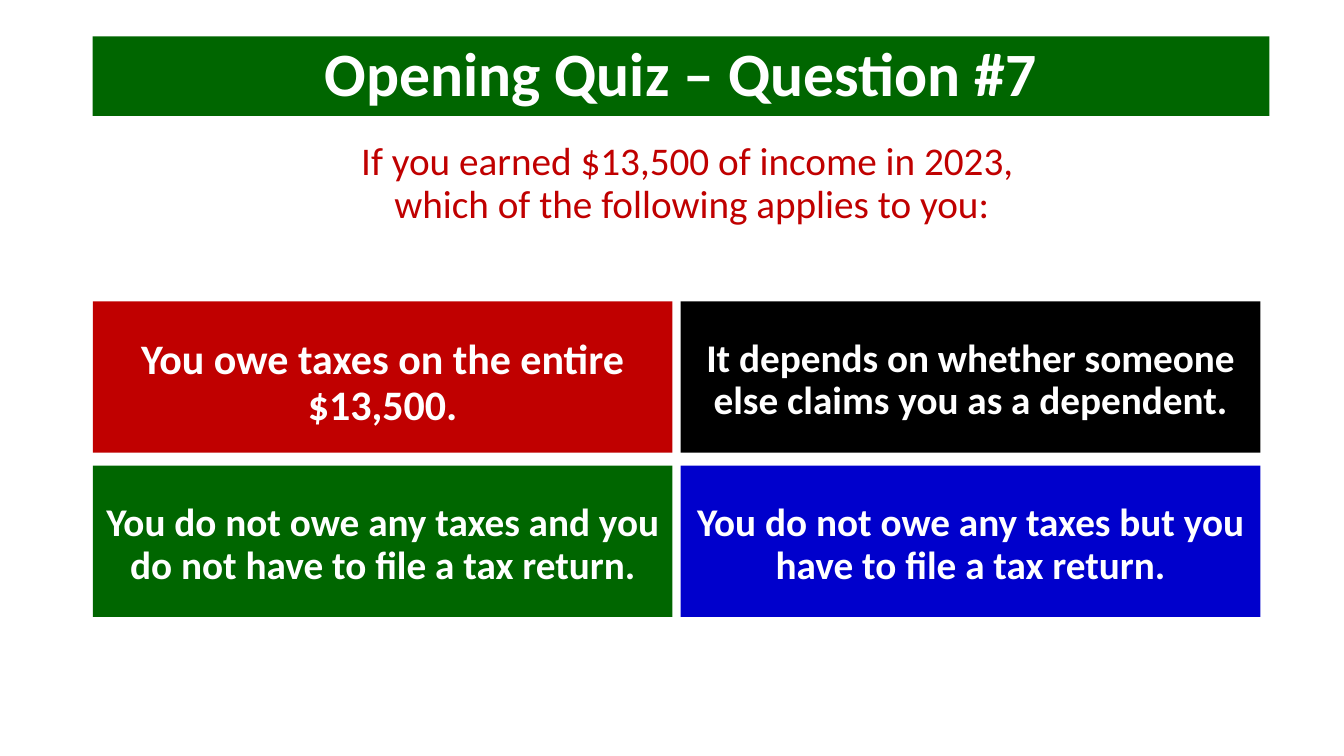
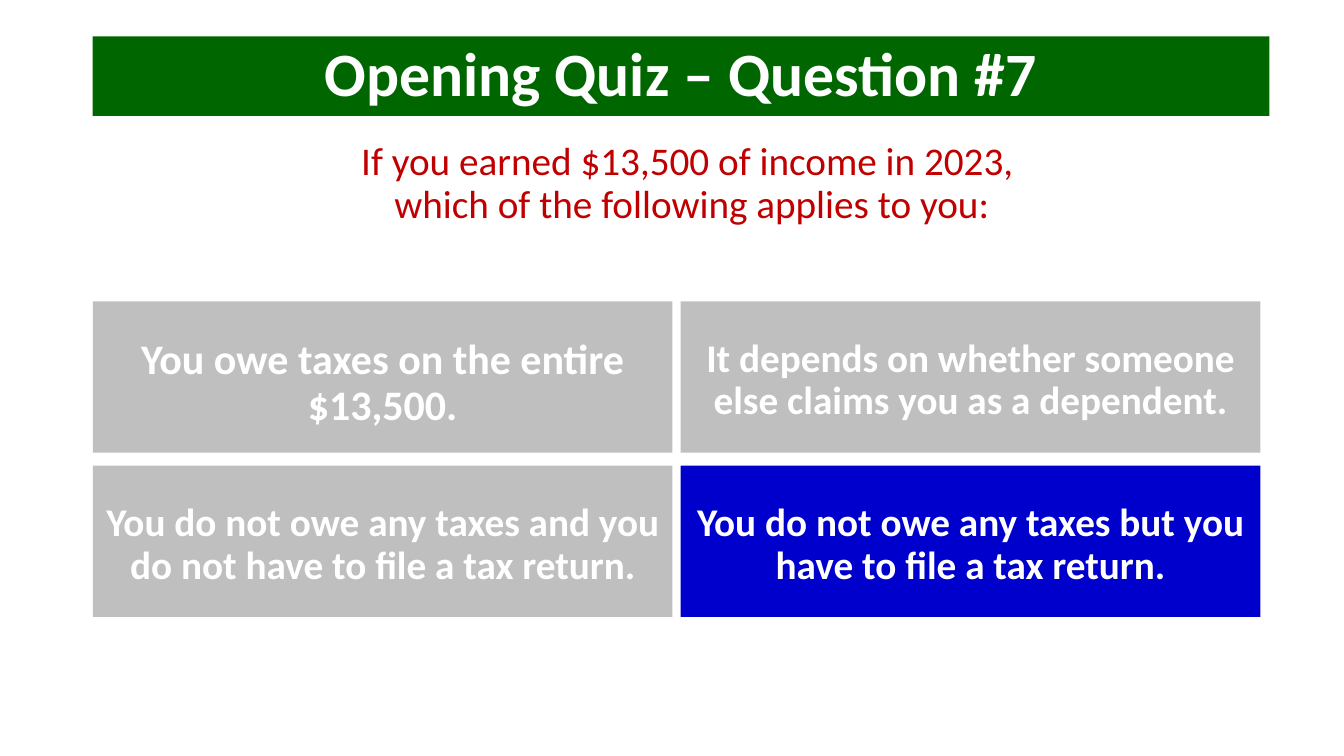
import pptx
import pptx.dml.color
import pptx.enum.shapes
import pptx.enum.text
import pptx.util

PX = 9144
FONT = "Calibri"
COLORS = {
    "green": "006600",
    "red": "C00000",
    "black": "000000",
    "blue": "0000CC",
    "muted": "BFBFBF",
    "white": "FFFFFF",
}

TITLE = "Opening Quiz – Question #7"
QUESTION = "If you earned $13,500 of income in 2023, \vwhich of the following applies to you:"
ANSWERS = [
    ("You owe taxes on the entire $13,500.", "red", 30),
    ("It depends on whether someone else claims you as a dependent.", "black", 28),
    ("You do not owe any taxes and you do not have to file a tax return.", "green", 28),
    ("You do not owe any taxes but you have to file a tax return.", "blue", 28),
]
CORRECT = 3
REVEALS = [False, True]

LEFT = 92
TITLE_BOX = (LEFT, 36, 1167, 79)
QUESTION_BOX = (LEFT, 136, 1188, 150)
GRID_TOP = 299
COLUMNS = 2
CARD_W, CARD_H = 575, 150
GAP_X, GAP_Y = 8, 13
CARD_INSET = 37


def rgb(name):
    return pptx.dml.color.RGBColor.from_string(COLORS[name])


def emu(box):
    return [v * PX for v in box]


def write(shape, text, size, color, bold, anchor, inset_top=5):
    tf = shape.text_frame
    tf.word_wrap = True
    tf.vertical_anchor = anchor
    tf.margin_top = inset_top * PX
    p = tf.paragraphs[0]
    p.text = text
    p.alignment = pptx.enum.text.PP_ALIGN.CENTER
    p.line_spacing = 0.9
    p.font.name = FONT
    p.font.size = pptx.util.Pt(size)
    p.font.bold = bold
    p.font.color.rgb = rgb(color)


def add_block(s, box, fill):
    sp = s.shapes.add_shape(pptx.enum.shapes.MSO_SHAPE.RECTANGLE, *emu(box))
    sp.shadow.inherit = False
    sp.fill.solid()
    sp.fill.fore_color.rgb = rgb(fill)
    sp.line.fill.background()
    return sp


def add_quiz_slide(prs, reveal):
    s = prs.slides.add_slide(prs.slide_layouts[6])
    top = pptx.enum.text.MSO_ANCHOR.TOP
    middle = pptx.enum.text.MSO_ANCHOR.MIDDLE
    write(add_block(s, TITLE_BOX, "green"), TITLE, 44, "white", True, middle)
    write(s.shapes.add_textbox(*emu(QUESTION_BOX)), QUESTION, 28, "red", False, top)
    for i, (text, color, size) in enumerate(ANSWERS):
        row, col = divmod(i, COLUMNS)
        box = (LEFT + col * (CARD_W + GAP_X), GRID_TOP + row * (CARD_H + GAP_Y), CARD_W, CARD_H)
        fill = "muted" if reveal and i != CORRECT else color
        write(add_block(s, box, fill), text, size, "white", True, top, CARD_INSET)


def main():
    prs = pptx.Presentation()
    prs.slide_width, prs.slide_height = emu((1333, 750))
    for reveal in REVEALS:
        add_quiz_slide(prs, reveal)
    prs.save("out.pptx")


if __name__ == "__main__":
    main()
